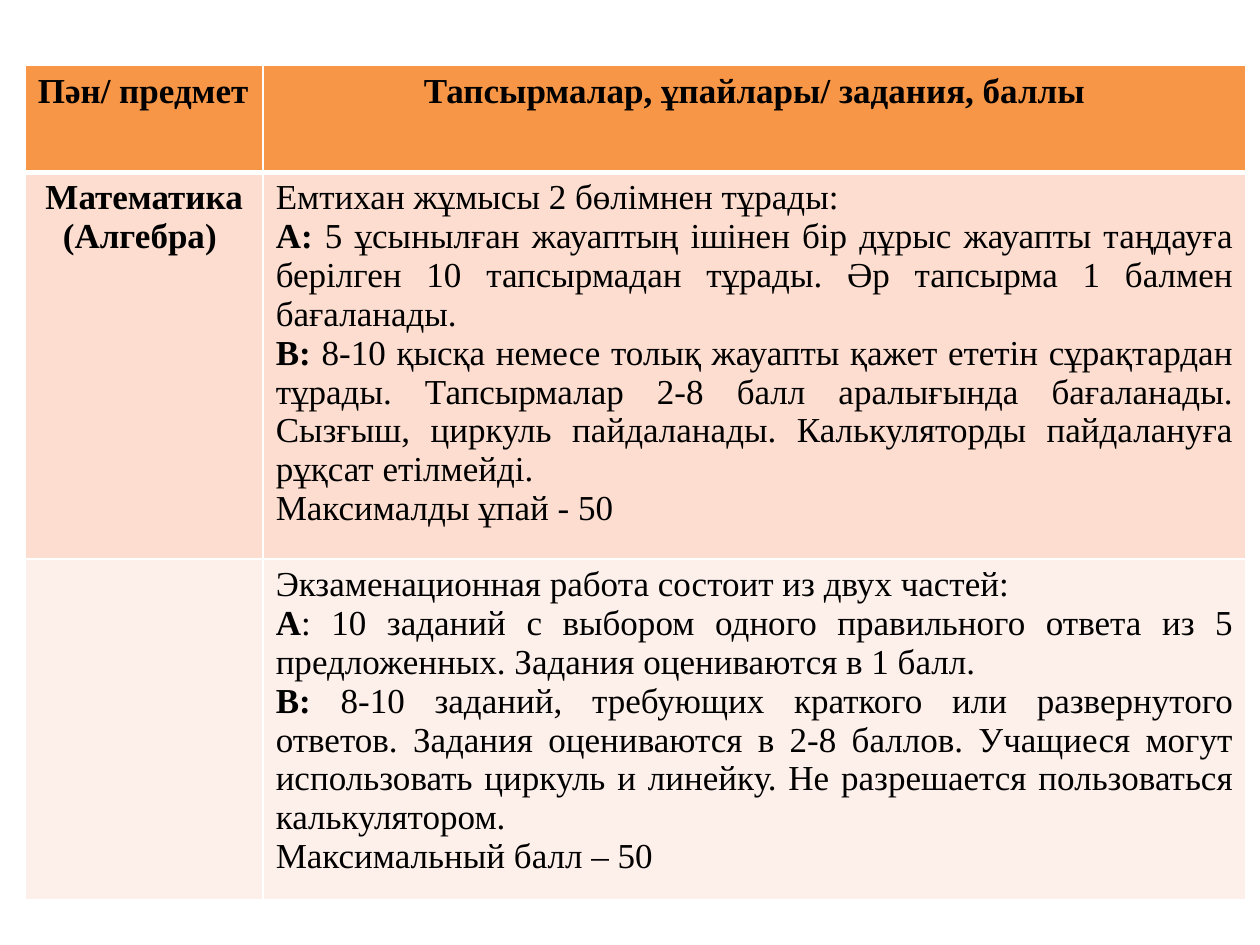
import pptx
import pptx.util
import pptx.dml.color
import pptx.enum.text
import pptx.oxml
import pptx.oxml.ns

Pt = pptx.util.Pt
CENTER = pptx.enum.text.PP_ALIGN.CENTER
JUSTIFY = pptx.enum.text.PP_ALIGN.JUSTIFY


def color(hex_string):
    return pptx.dml.color.RGBColor.from_string(hex_string)


def set_borders(cell, bottom_width):
    properties = cell._tc.get_or_add_tcPr()
    widths = {"lnL": 1, "lnR": 1, "lnT": 1, "lnB": bottom_width}
    for index, (side, width) in enumerate(widths.items()):
        border = pptx.oxml.parse_xml(
            f'<a:{side} {pptx.oxml.ns.nsdecls("a")} w="{Pt(width)}">'
            '<a:solidFill><a:srgbClr val="FFFFFF"/></a:solidFill>'
            f'</a:{side}>')
        properties.insert(index, border)


presentation = pptx.Presentation()
presentation.slide_width = Pt(720)
presentation.slide_height = Pt(540)
slide = presentation.slides.add_slide(presentation.slide_layouts[6])

# Each paragraph is a bold lead and a regular remainder
header = [
    (JUSTIFY, [("Пән/ предмет", "")]),
    (CENTER, [("Тапсырмалар, ұпайлары/ задания, баллы", "")]),
]
kazakh = [
    (CENTER, [("Математика (Алгебра) ", "")]),
    (JUSTIFY, [
        ("", "Емтихан жұмысы 2 бөлімнен тұрады: "),
        ("А: ", "5 ұсынылған жауаптың ішінен бір дұрыс жауапты таңдауға "
                "берілген 10 тапсырмадан тұрады. Әр тапсырма 1 балмен "
                "бағаланады. "),
        ("В: ", "8-10 қысқа немесе толық жауапты қажет ететін сұрақтардан "
                "тұрады. Тапсырмалар 2-8 балл аралығында бағаланады. Сызғыш, "
                "циркуль пайдаланады. Калькуляторды пайдалануға рұқсат "
                "етілмейді. "),
        ("", "Максималды ұпай - 50"),
    ]),
]
russian = [
    (CENTER, []),
    (JUSTIFY, [
        ("", "Экзаменационная работа состоит из двух частей:"),
        ("А", ": 10 заданий с выбором одного правильного ответа из 5 "
              "предложенных. Задания оцениваются в 1 балл. "),
        ("В: ", "8-10 заданий, требующих краткого или развернутого ответов. "
                "Задания оцениваются в 2-8 баллов. Учащиеся могут "
                "использовать циркуль и линейку. Не разрешается пользоваться "
                "калькулятором."),
        ("", "Максимальный балл – 50 "),
    ]),
]

# Row height, fill, bottom border width, cells
rows = [
    (61, "F79646", 3, header),
    (221, "FCDDCF", 1, kazakh),
    (194.5, "FDEFE9", 1, russian),
]
column_widths = [136, 561.6]

# Table of exam tasks and points
table = slide.shapes.add_table(
    len(rows), len(column_widths), Pt(14.4), Pt(37.5),
    Pt(sum(column_widths)), Pt(sum(row[0] for row in rows))).table
for column, width in zip(table.columns, column_widths):
    column.width = Pt(width)

for row_index, (height, fill, bottom_width, cells) in enumerate(rows):
    table.rows[row_index].height = Pt(height)
    for column_index, (alignment, paragraphs) in enumerate(cells):
        cell = table.cell(row_index, column_index)
        cell.fill.solid()
        cell.fill.fore_color.rgb = color(fill)
        set_borders(cell, bottom_width)

        # Cell text
        text_frame = cell.text_frame
        for index, (lead, remainder) in enumerate(paragraphs):
            paragraph = text_frame.add_paragraph() if index else text_frame.paragraphs[0]
            paragraph.alignment = alignment
            for text, bold in ((lead, True), (remainder, False)):
                if text:
                    run = paragraph.add_run()
                    run.text = text
                    run.font.name = "Times New Roman"
                    run.font.size = Pt(20)
                    run.font.bold = bold
                    run.font.color.rgb = color("000000")

presentation.save("out.pptx")
